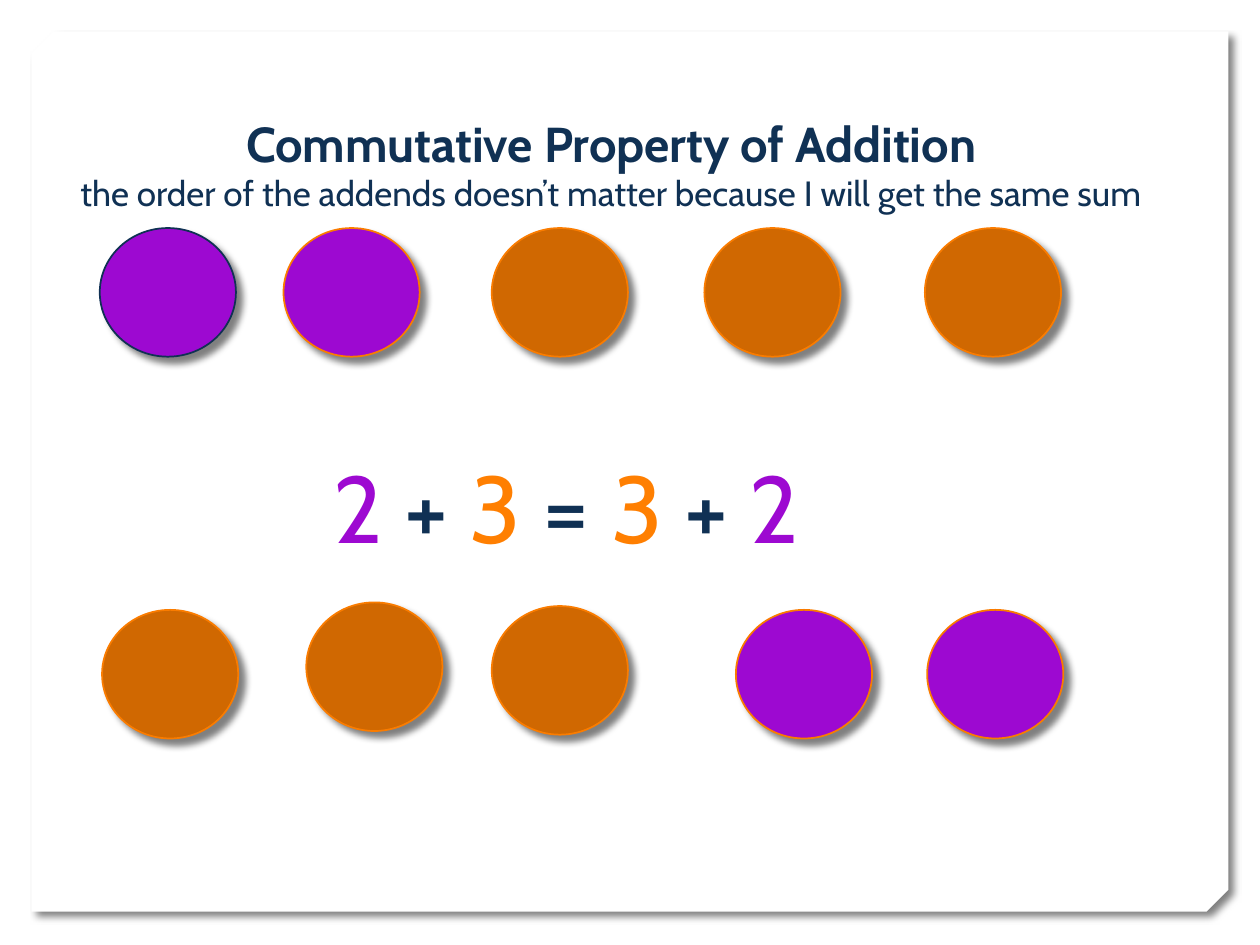
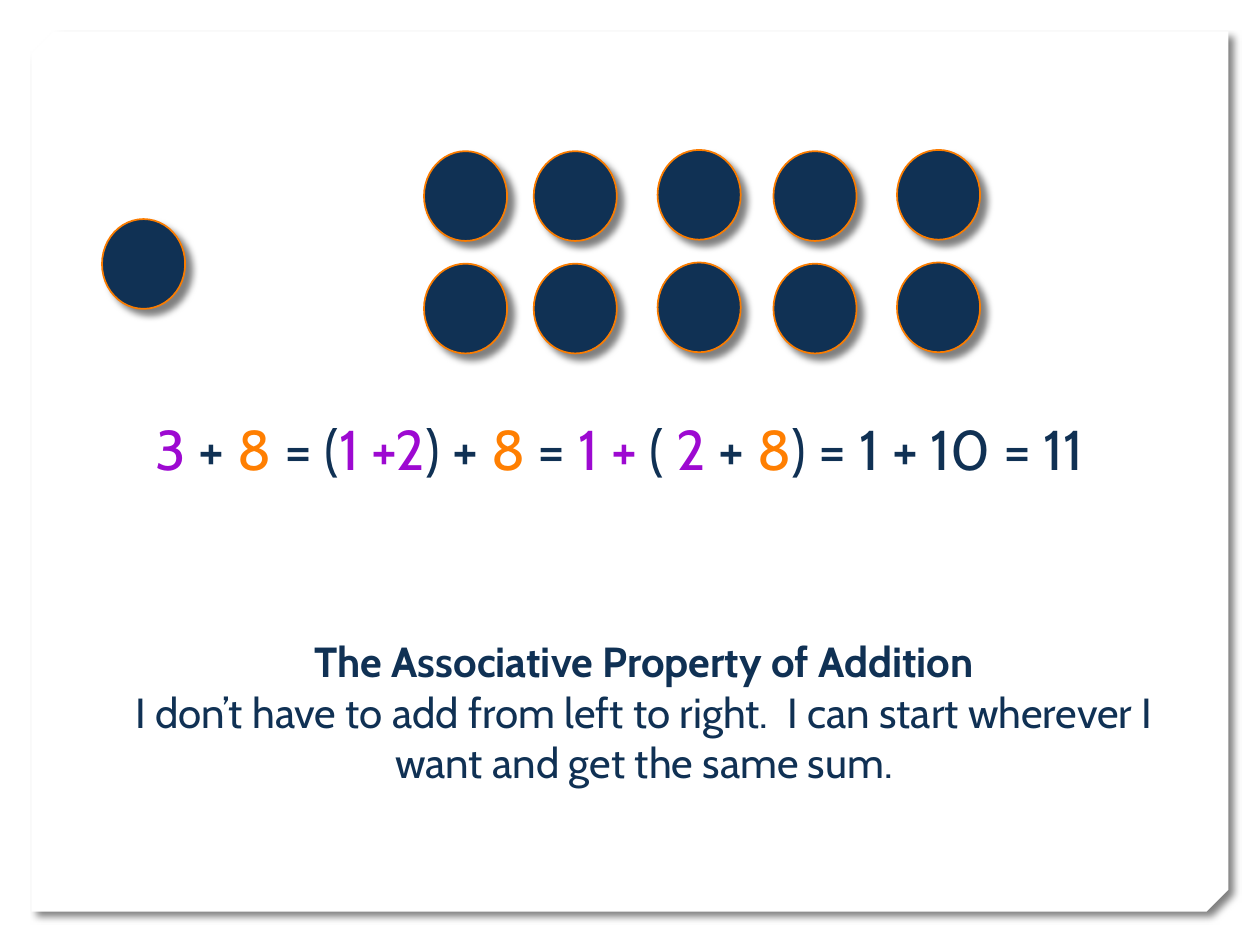
from pptx import Presentation
from pptx.dml.color import RGBColor
from pptx.enum.shapes import MSO_SHAPE
from pptx.enum.text import MSO_ANCHOR, MSO_AUTO_SIZE, PP_ALIGN
from pptx.oxml import parse_xml
from pptx.oxml.ns import nsdecls
from pptx.util import Pt

COLORS = {
    "white": "FFFFFF",
    "navy": "103154",
    "purple": "9D09D1",
    "orange": "FF7F01",
    "burnt": "D06801",
    "outline": "FA7C00",
}
FONT = "Cabin"
SHADOW = (
    f'<a:effectLst {nsdecls("a")}>'
    '<a:outerShdw blurRad="50800" dist="63500" dir="2700000" algn="tl" rotWithShape="0">'
    '<a:srgbClr val="000000"><a:alpha val="50000"/></a:srgbClr>'
    '</a:outerShdw></a:effectLst>'
)


def write(paragraph, text, size=20, color="navy", bold=False):
    run = paragraph.add_run()
    run.text = text
    run.font.name = FONT
    run.font.size = Pt(size)
    run.font.bold = bold
    run.font.color.rgb = RGBColor.from_string(COLORS[color])


def add_shadowed(slide, kind, left, top, width, height, fill, line=None):
    shape = slide.shapes.add_shape(kind, Pt(left), Pt(top), Pt(width), Pt(height))
    shape.fill.solid()
    shape.fill.fore_color.rgb = RGBColor.from_string(COLORS[fill])
    if line:
        shape.line.color.rgb = RGBColor.from_string(COLORS[line])
        shape.line.width = Pt(1)
    else:
        shape.line.fill.background()
    shape.element.spPr.append(parse_xml(SHADOW))
    return shape


presentation = Presentation()
presentation.slide_width = Pt(720)
presentation.slide_height = Pt(540)
layout = presentation.slide_layouts.get_by_name("Title Only")
commutative = presentation.slides.add_slide(layout)
associative = presentation.slides.add_slide(layout)

frame = add_shadowed(commutative, MSO_SHAPE.SNIP_2_DIAG_RECTANGLE, 18, 18, 684, 503, "white")
frame.adjustments[0] = 0
frame.adjustments[1] = 0.025
frame.element.spPr.xfrm.set("flipV", "1")
layout.shapes.element.insert(2, frame.element)

addend_counters = [
    (57, 130.3, "purple", "navy"),
    (162, 130.3, "purple", "outline"),
    (281, 130.3, "burnt", "outline"),
    (402.5, 130.3, "burnt", "outline"),
    (528.5, 130.3, "burnt", "outline"),
    (58.3, 348.5, "burnt", "outline"),
    (175, 344.2, "burnt", "outline"),
    (281, 346.3, "burnt", "outline"),
    (420.5, 348.5, "purple", "outline"),
    (529.8, 348.5, "purple", "outline"),
]
for left, top, fill, line in addend_counters:
    add_shadowed(commutative, MSO_SHAPE.OVAL, left, top, 77.8, 73.5, fill, line)

group_columns = [(242.3, 86.4), (305, 86.4), (375.8, 85.7), (442, 86.4), (512.6, 85.7)]
grouped_counters = [(left, top + row * 64.3) for row in range(2) for left, top in group_columns]
for left, top in [(58.3, 125.2)] + grouped_counters:
    add_shadowed(associative, MSO_SHAPE.OVAL, left, top, 47.5, 51.3, "navy", "outline")

equations = [
    (commutative, (57.8, 253.1, 531.4, 72.7), 54, PP_ALIGN.CENTER, [
        ("2", "purple"), (" + ", "navy"), ("3", "orange"), (" = ", "navy"),
        ("3", "orange"), (" + ", "navy"), ("2", "purple"),
    ]),
    (associative, (81.8, 233.3, 583.2, 67.7), 32, PP_ALIGN.LEFT, [
        ("3", "purple"), (" + ", "navy"), ("8", "orange"), (" = (", "navy"),
        ("1 +2", "purple"), (") + ", "navy"), ("8", "orange"), (" = ", "navy"),
        ("1 + ", "purple"), ("(", "navy"), (" 2 ", "purple"), ("+ ", "navy"),
        ("8", "orange"), (") = 1 + 10 = 11", "navy"),
    ]),
]
for slide, box, size, alignment, terms in equations:
    text_frame = slide.shapes.add_textbox(*map(Pt, box)).text_frame
    text_frame.word_wrap = True
    paragraph = text_frame.paragraphs[0]
    paragraph.alignment = alignment
    for text, color in terms:
        write(paragraph, text, size=size, color=color)

titles = [
    (commutative, (36.9, 61, 624.6, 65.5), [
        ("Commutative Property of Addition", 28, True),
        ("the order of the addends doesn’t matter because I will get the same sum", 20, False),
    ]),
    (associative, (58.3, 359.7, 619.4, 94.3), [
        ("The Associative Property of Addition", 24, True),
        ("I don’t have to add from left to right.  I can start wherever I want and get the same sum.", 24, False),
    ]),
]
for slide, box, lines in titles:
    title = slide.shapes.title
    title.left, title.top, title.width, title.height = map(Pt, box)
    text_frame = title.text_frame
    text_frame.word_wrap = True
    text_frame.auto_size = MSO_AUTO_SIZE.NONE
    text_frame.vertical_anchor = MSO_ANCHOR.TOP
    for index, (text, size, bold) in enumerate(lines):
        paragraph = text_frame.add_paragraph() if index else text_frame.paragraphs[0]
        paragraph.alignment = PP_ALIGN.CENTER
        write(paragraph, text, size=size, bold=bold)

presentation.save("out.pptx")
